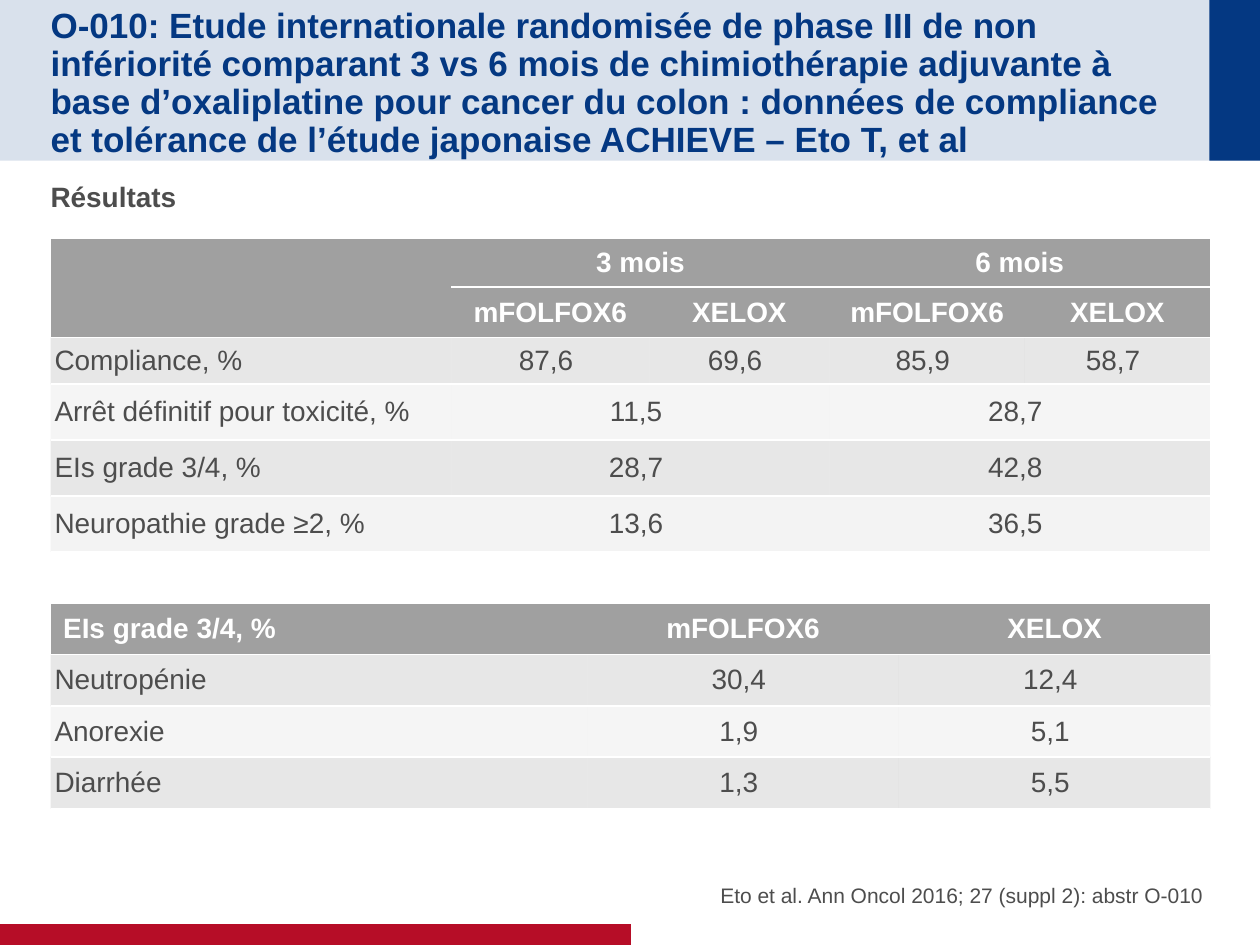
from lxml.etree import SubElement
from pptx import Presentation
from pptx.dml.color import RGBColor
from pptx.enum.shapes import MSO_SHAPE
from pptx.enum.text import MSO_ANCHOR, PP_ALIGN
from pptx.oxml import parse_xml
from pptx.oxml.ns import nsdecls, qn
from pptx.util import Cm, Pt

NAVY = RGBColor(0x04, 0x38, 0x82)
RED = RGBColor(0xB6, 0x0D, 0x27)
TEXT = RGBColor(0x4D, 0x4D, 0x4D)
GREY = RGBColor(0xA0, 0xA0, 0xA0)
PALE = RGBColor(0xD3, 0xD3, 0xD3)
WHITE = RGBColor(0xFF, 0xFF, 0xFF)
NO_STYLE = "{2D5ABB26-0587-4C30-8999-92F81FD0307C}"

# Content: None marks a cell covered by its left or upper neighbour
TITLE = ("O-010: Etude internationale randomisée de phase III de non infériorité "
         "comparant 3 vs 6 mois de chimiothérapie adjuvante à base d’oxaliplatine "
         "pour cancer du colon : données de compliance et tolérance de l’étude "
         "japonaise ACHIEVE – Eto T, et al")
SUBTITLE = "Résultats"
REFERENCE = "Eto et al. Ann Oncol 2016; 27 (suppl 2): abstr O-010 "
HEAD, DARK, LIGHT, LAST = (GREY, 100), (GREY, 25), (GREY, 10), (PALE, 25)

TABLES = [
    {"top": 4.8, "header_rows": 2,
     "columns": [8.08, 3.99, 3.63, 3.94, 3.73],
     "heights": [0.99, 0.99, 0.91, 1.13, 1.13, 1.13],
     "shades": [HEAD, HEAD, DARK, LIGHT, DARK, LAST],
     "rows": [["", "3 mois", None, "6 mois", None],
              [None, "mFOLFOX6", "XELOX", "mFOLFOX6", "XELOX"],
              ["Compliance, %", "87,6", "69,6", "85,9", "58,7"],
              ["Arrêt définitif pour toxicité, %", "11,5", None, "28,7", None],
              ["EIs grade 3/4, %", "28,7", None, "42,8", None],
              ["Neuropathie grade ≥2, %", "13,6", None, "36,5", None]]},
    {"top": 12.16, "header_rows": 1,
     "columns": [10.82, 6.28, 6.28],
     "heights": [1.035] * 4,
     "shades": [HEAD, DARK, LIGHT, DARK],
     "rows": [["EIs grade 3/4, %", "mFOLFOX6", "XELOX"],
              ["Neutropénie", "30,4", "12,4"],
              ["Anorexie", "1,9", "5,1"],
              ["Diarrhée", "1,3", "5,5"]]},
]

# Left, top, width, height, colour, opacity in percent
BANDS = [(0, 0, 25.4, 3.24, NAVY, 15),
         (24.38, 0, 1.02, 3.24, NAVY, 100),
         (0, 18.63, 12.72, 0.42, RED, 100)]

MARGIN, CONTENT_WIDTH = 1.02, 23.37
TEXTS = [
    (TITLE, (MARGIN, 0.51, 22.89, 2.24), (0.13, 0), MSO_ANCHOR.MIDDLE,
     {"line_spacing": 0.9}, {"size": Pt(20), "bold": True, "color": NAVY}),
    (REFERENCE, (12.9, 16.94, 11.48, 1.35), (0, 0), MSO_ANCHOR.BOTTOM,
     {"alignment": PP_ALIGN.RIGHT, "space_after": Pt(4)},
     {"size": Pt(12), "bold": False, "color": TEXT}),
    (SUBTITLE, (MARGIN, 3.48, CONTENT_WIDTH, 1.1), (0.13, 0.13), MSO_ANCHOR.TOP,
     {"space_after": Pt(4)}, {"size": Pt(16), "bold": True, "color": TEXT}),
]


def set_fill(target, element, colour, opacity):
    target.fill.solid()
    target.fill.fore_color.rgb = colour
    if opacity < 100:
        tint = element.find(".//" + qn("a:solidFill")).find(qn("a:srgbClr"))
        SubElement(tint, qn("a:alpha"), val=str(opacity * 1000))


def set_attributes(target, values):
    for name, value in values.items():
        setattr(target, name, value)


def write(paragraph, text, size, bold, color):
    run = paragraph.add_run()
    run.text = text
    set_attributes(run.font, {"name": "Arial", "size": size, "bold": bold})
    run.font.color.rgb = color


def add_horizontal_borders(properties):
    for index, side in enumerate(("lnT", "lnB")):
        properties.insert(index, parse_xml(
            f'<a:{side} {nsdecls("a")} w="12700"><a:solidFill>'
            f'<a:srgbClr val="{WHITE}"/></a:solidFill></a:{side}>'))


def fill_cell(table, data, row, column):
    cell, text = table.cell(row, column), data["rows"][row][column]
    is_header = row < data["header_rows"]
    properties = cell._tc.get_or_add_tcPr()
    set_fill(cell, properties, *data["shades"][row])
    if text is not None or column > 0:
        add_horizontal_borders(properties)
    cell.vertical_anchor = MSO_ANCHOR.MIDDLE
    if not is_header:
        cell.margin_left = Cm(0.08)
    paragraph = cell.text_frame.paragraphs[0]
    if column > 0:
        paragraph.alignment = PP_ALIGN.CENTER
    write(paragraph, text or "", Pt(16), is_header, WHITE if is_header else TEXT)


def merge_covered(table, rows):
    for r, row in enumerate(rows):
        for c, text in enumerate(row):
            if text is not None:
                continue
            origin = table.cell(r, c - 1) if c > 0 else table.cell(r - 1, c)
            origin.merge(table.cell(r, c))


def add_results(slide, data):
    rows, columns, heights = data["rows"], data["columns"], data["heights"]
    frame = slide.shapes.add_table(
        len(rows), len(columns), Cm(MARGIN), Cm(data["top"]),
        Cm(sum(columns)), Cm(sum(heights)))
    table = frame.table
    table._tbl.tblPr.find(qn("a:tableStyleId")).text = NO_STYLE
    for column, width in zip(table.columns, columns):
        column.width = Cm(width)
    for row, height in zip(table.rows, heights):
        row.height = Cm(height)
    for r in range(len(rows)):
        for c in range(len(columns)):
            fill_cell(table, data, r, c)
    merge_covered(table, rows)


def main():
    prs = Presentation()
    prs.slide_width, prs.slide_height = Cm(25.4), Cm(19.05)
    slide = prs.slides.add_slide(prs.slide_layouts[6])

    # Coloured bands
    for *box, colour, opacity in BANDS:
        band = slide.shapes.add_shape(MSO_SHAPE.RECTANGLE, *map(Cm, box))
        band.shadow.inherit = False
        set_fill(band, band._element.spPr, colour, opacity)
        band.line.fill.background()

    # Title, reference and subtitle
    for text, box, (inset_top, inset_bottom), anchor, layout, font in TEXTS:
        frame = slide.shapes.add_textbox(*map(Cm, box)).text_frame
        set_attributes(frame, {
            "word_wrap": True, "vertical_anchor": anchor,
            "margin_left": 0, "margin_right": 0,
            "margin_top": Cm(inset_top), "margin_bottom": Cm(inset_bottom)})
        set_attributes(frame.paragraphs[0], layout)
        write(frame.paragraphs[0], text, **font)

    # Result tables
    for data in TABLES:
        add_results(slide, data)

    prs.save("out.pptx")


if __name__ == "__main__":
    main()
